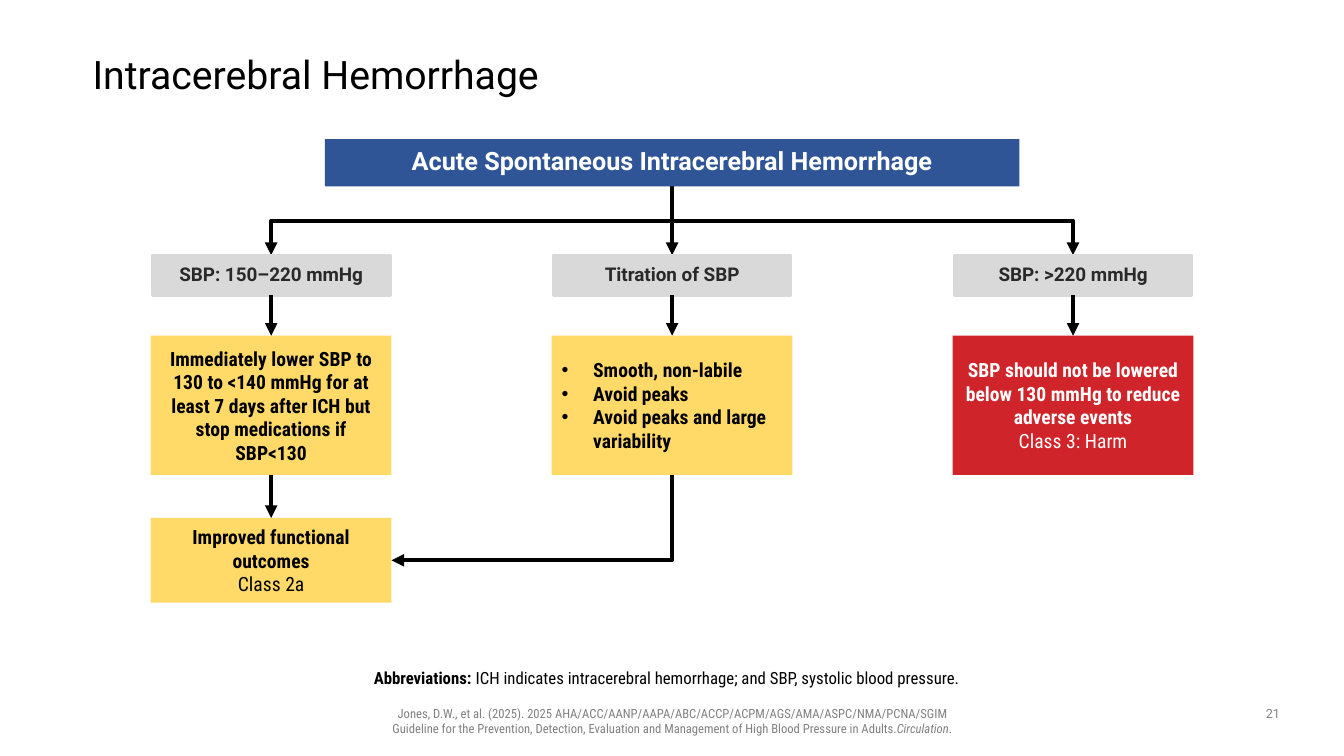
from lxml import etree
from pptx import Presentation
from pptx.dml.color import RGBColor
from pptx.enum.shapes import MSO_CONNECTOR, MSO_SHAPE
from pptx.enum.text import MSO_ANCHOR, PP_ALIGN
from pptx.oxml.ns import qn
from pptx.util import Pt

RECTANGLE = MSO_SHAPE.RECTANGLE
STRAIGHT, ELBOW = MSO_CONNECTOR.STRAIGHT, MSO_CONNECTOR.ELBOW
LEFT, CENTER = PP_ALIGN.LEFT, PP_ALIGN.CENTER
TOP, MIDDLE, BOTTOM = MSO_ANCHOR.TOP, MSO_ANCHOR.MIDDLE, MSO_ANCHOR.BOTTOM

BLACK = RGBColor(0x00, 0x00, 0x00)
WHITE = RGBColor(0xFF, 0xFF, 0xFF)
BLUE = RGBColor(0x2F, 0x55, 0x97)
LIGHT_GRAY = RGBColor(0xD9, 0xD9, 0xD9)
MID_GRAY = RGBColor(0x80, 0x80, 0x80)
DARK_GRAY = RGBColor(0x29, 0x29, 0x29)
YELLOW = RGBColor(0xFF, 0xDA, 0x68)
RED = RGBColor(0xCF, 0x24, 0x2A)

REGULAR, CONDENSED = "Roboto", "Roboto Condensed"
NO_INSETS = (0, 0, 0, 0)
DEFAULT_INSETS = (7.2, 3.6, 7.2, 3.6)


class FlowSlide:
    """Draws text, boxes and arrows on one slide; all lengths are in points."""

    line_width = 3
    bullet_indent = 22.5

    def __init__(self, slide):
        self.slide = slide
        self.shapes = slide.shapes

    def fill_text(self, shape, paragraphs, font, align=CENTER, anchor=MIDDLE,
                  insets=DEFAULT_INSETS, spacing=1.0, bullets=False):
        """Each paragraph is a list of (text, font changes) runs."""
        frame = shape.text_frame
        left, top, right, bottom = map(Pt, insets)
        frame_format = {
            "word_wrap": True, "vertical_anchor": anchor,
            "margin_left": left, "margin_top": top,
            "margin_right": right, "margin_bottom": bottom,
        }
        for name, value in frame_format.items():
            setattr(frame, name, value)
        for index, runs in enumerate(paragraphs):
            paragraph = frame.add_paragraph() if index else frame.paragraphs[0]
            paragraph.alignment = align
            paragraph.line_spacing = spacing
            if bullets:
                self.add_bullet(paragraph)
            for text, changes in runs:
                for number, line in enumerate(text.split("\n")):
                    if number:
                        paragraph.add_line_break()
                    run = paragraph.add_run()
                    run.text = line
                    self.set_font(run.font, {**font, **changes})

    def set_font(self, font, font_format):
        for name, value in font_format.items():
            if name == "color":
                font.color.rgb = value
            else:
                setattr(font, name, value)

    def add_bullet(self, paragraph):
        properties = paragraph._p.get_or_add_pPr()
        properties.set("marL", str(Pt(self.bullet_indent)))
        properties.set("indent", str(-Pt(self.bullet_indent)))
        etree.SubElement(properties, qn("a:buFont")).set("typeface", "Arial")
        etree.SubElement(properties, qn("a:buChar")).set("char", "•")

    def text(self, place, paragraphs, font, **layout):
        shape = self.shapes.add_textbox(*map(Pt, place))
        self.fill_text(shape, paragraphs, font, **layout)

    def box(self, place, fill, paragraphs, font, line=None, **layout):
        shape = self.shapes.add_shape(RECTANGLE, *map(Pt, place))
        shape.shadow.inherit = False
        shape.fill.solid()
        shape.fill.fore_color.rgb = fill
        if line is None:
            shape.line.fill.background()
        else:
            shape.line.color.rgb = line
            shape.line.width = Pt(2)
        self.fill_text(shape, paragraphs, font, **layout)

    def arrow(self, begin, end, kind=STRAIGHT):
        connector = self.shapes.add_connector(kind, *map(Pt, begin + end))
        connector.line.color.rgb = BLACK
        connector.line.width = Pt(self.line_width)
        line = connector.line._get_or_add_ln()
        etree.SubElement(line, qn("a:tailEnd")).set("type", "triangle")
        etree.SubElement(connector._element.spPr, qn("a:effectLst"))
        return connector

    def elbow(self, begin, end, preset="bentConnector3"):
        """Leaves downwards: a sideways elbow turned about its centre."""
        (x1, y1), (x2, y2) = begin, end
        center_x, center_y = (x1 + x2) / 2, (y1 + y2) / 2
        half_width, half_height = (y2 - y1) / 2, abs(x2 - x1) / 2
        to_right = x2 > x1
        side = -half_width if to_right else half_width
        connector = self.arrow((center_x - side, center_y - half_height),
                               (center_x + side, center_y + half_height), ELBOW)
        properties = connector._element.spPr
        turn = 270 if to_right else 90
        properties.find(qn("a:xfrm")).set("rot", str(turn * 60000))
        properties.find(qn("a:prstGeom")).set("prst", preset)


def font_format(name, size, color, bold=False):
    return {"name": name, "size": Pt(size), "color": color, "bold": bold}


def main():
    presentation = Presentation()
    presentation.slide_width, presentation.slide_height = Pt(960), Pt(540)
    flow = FlowSlide(presentation.slides.add_slide(presentation.slide_layouts[6]))
    plain = {"bold": False}

    # Grid: three columns, rows as (top, height)
    columns = [193.7 + 286.4 * number for number in range(3)]
    left, middle, right = columns
    banner_top, banner_height = 99.4, 33.8
    label_top, label_height = 182.2, 28.8
    advice_top, advice_height = 239.8, 99.4
    outcome_top, outcome_height = 370, 60.5
    label_width, advice_width, banner_width = 170, 172, 496
    banner_bottom = banner_top + banner_height
    label_bottom = label_top + label_height
    advice_bottom = advice_top + advice_height

    # Title
    flow.text((66.2, 28.8, 828, 51.8), [[("Intracerebral Hemorrhage", {})]],
              font_format(REGULAR, 28, BLACK), align=LEFT, insets=NO_INSETS, spacing=0.9)

    # Branches from the banner
    for column in (left, right):
        flow.elbow((middle, banner_bottom), (column, label_top))
    flow.arrow((middle, banner_bottom), (middle, label_top))

    # Banner
    flow.box((middle - banner_width / 2, banner_top, banner_width, banner_height), BLUE,
             [[("Acute Spontaneous Intracerebral Hemorrhage", {})]],
             font_format(REGULAR, 18, WHITE, True), insets=NO_INSETS, spacing=0.9)

    # Branch labels
    labels = ["SBP: 150–220 mmHg", "Titration of SBP", "SBP: >220 mmHg"]
    for column, label in zip(columns, labels):
        flow.box((column - label_width / 2, label_top, label_width, label_height),
                 LIGHT_GRAY, [[(label, {})]], font_format(REGULAR, 13.5, DARK_GRAY, True),
                 line=LIGHT_GRAY, insets=NO_INSETS, spacing=0.9)

    # Advice and outcome boxes
    lower = [[("Immediately lower SBP to 130 to <140 mmHg for at least 7 days "
               "after ICH but stop medications if SBP<130", {})]]
    titrate = [[(item, {})] for item in (
        "Smooth, non-labile", "Avoid peaks", "Avoid peaks and large variability")]
    harm = [[("SBP should not be lowered below 130 mmHg to reduce adverse events", {})],
            [("Class 3: Harm", plain)]]
    outcome = [[("Improved functional outcomes", {})], [("Class 2a", plain)]]
    bulleted = {"align": LEFT, "bullets": True}
    for column, top, height, fill, color, paragraphs, layout in [
        (left, advice_top, advice_height, YELLOW, BLACK, lower, {}),
        (left, outcome_top, outcome_height, YELLOW, BLACK, outcome, {}),
        (middle, advice_top, advice_height, YELLOW, BLACK, titrate, bulleted),
        (right, advice_top, advice_height, RED, WHITE, harm, {}),
    ]:
        flow.box((column - advice_width / 2, top, advice_width, height), fill,
                 paragraphs, font_format(CONDENSED, 14, color, True), **layout)

    # Arrows between the rows
    for column in columns:
        flow.arrow((column, label_bottom), (column, advice_top))
    flow.arrow((left, advice_bottom), (left, outcome_top))
    flow.elbow((middle, advice_bottom),
               (left + advice_width / 2, outcome_top + outcome_height / 2),
               "bentConnector2")

    # Abbreviations, citation and page number
    flow.text((135.4, 462.2, 689, 33.1),
              [[("Abbreviations: ", {"bold": True}),
                ("ICH indicates intracerebral hemorrhage; and SBP, "
                 "systolic blood pressure.", {})]],
              font_format(CONDENSED, 12, BLACK), anchor=BOTTOM,
              insets=(0, 3.6, 7.2, 3.6), spacing=0.9)
    flow.text((169.9, 500.4, 620.6, 28.8),
              [[("Jones, D.W., et al. (2025). 2025 AHA/ACC/AANP/AAPA/ABC/ACCP/ACPM/AGS/"
                 "AMA/ASPC/NMA/PCNA/SGIM\nGuideline for the Prevention, Detection, "
                 "Evaluation and Management of High Blood Pressure in Adults.", {}),
                ("Circulation", {"italic": True}), (".", {})]],
              font_format(CONDENSED, 9, MID_GRAY), anchor=TOP)
    flow.text((894.2, 500.4, 30.2, 18.7), [[("21", {})]],
              font_format(REGULAR, 9, MID_GRAY), anchor=TOP)

    presentation.save("out.pptx")


if __name__ == "__main__":
    main()
